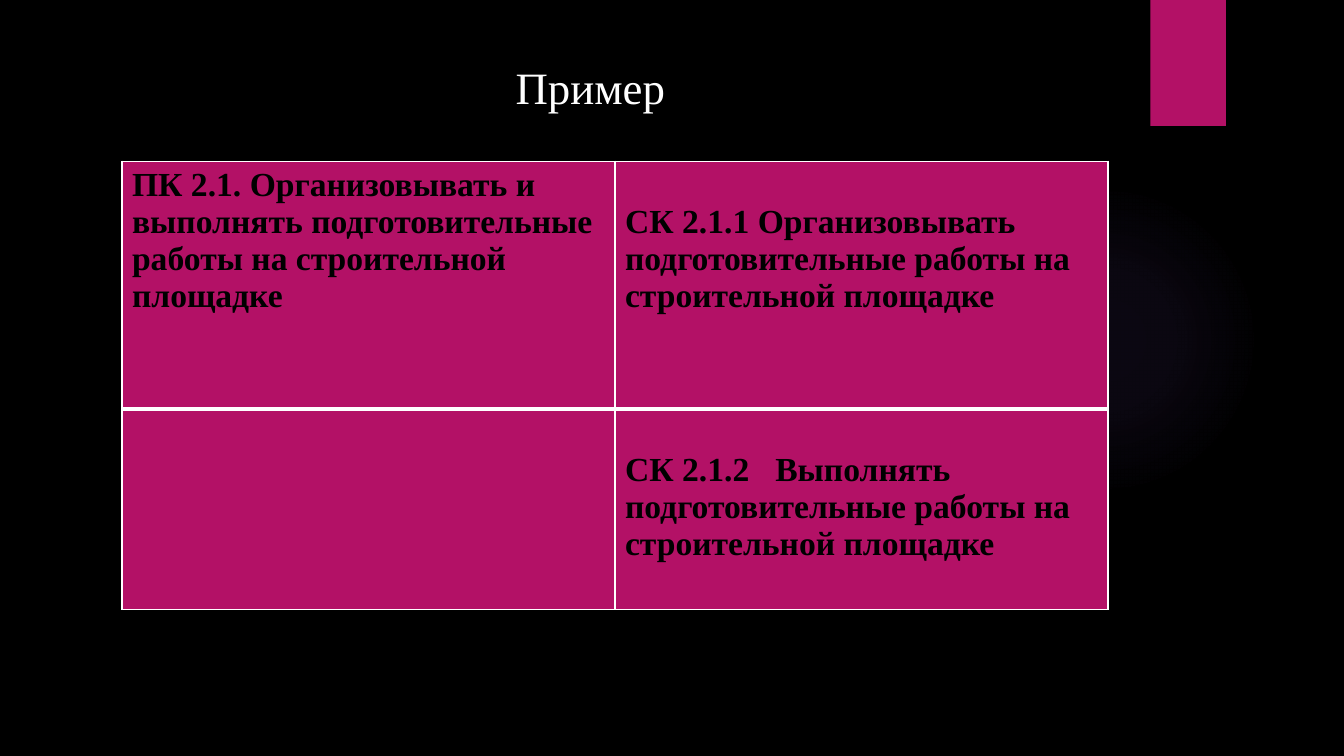
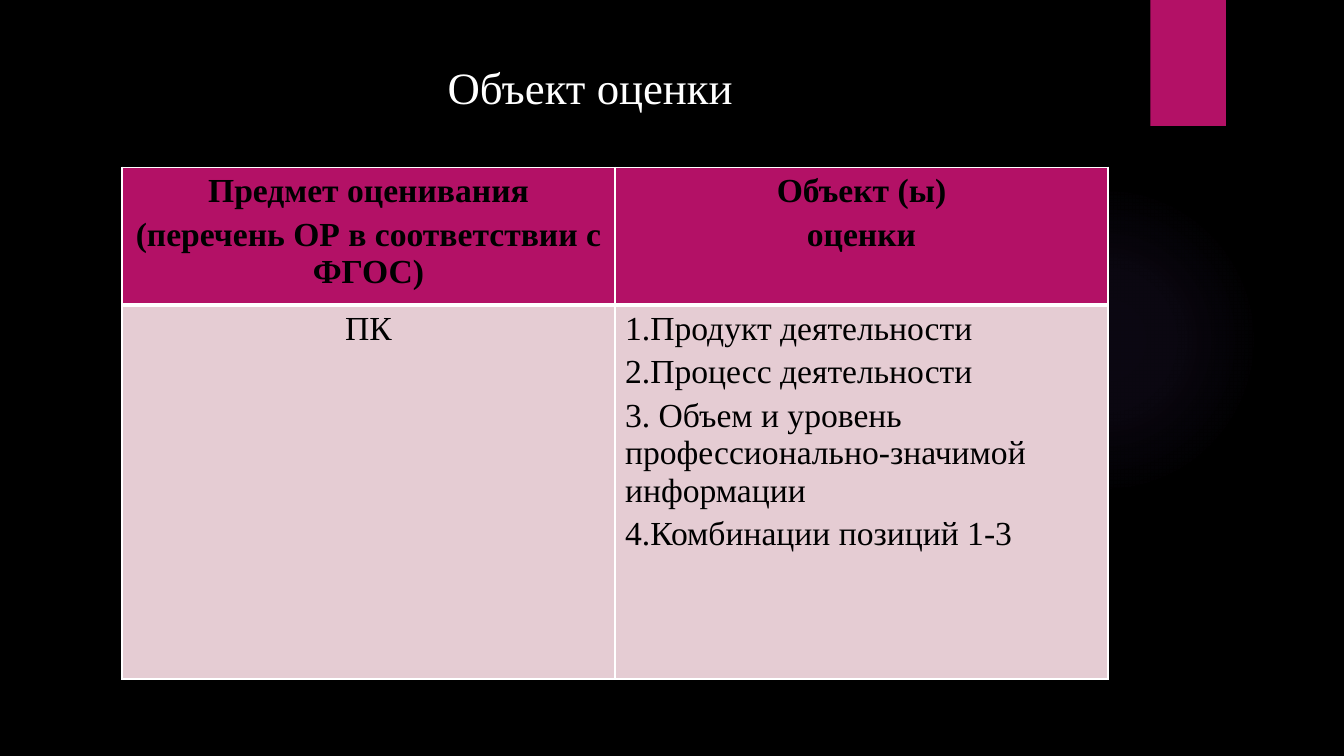
from lxml import etree
from pptx import Presentation
from pptx.dml.color import RGBColor
from pptx.enum.shapes import MSO_SHAPE
from pptx.enum.text import PP_ALIGN
from pptx.oxml import parse_xml
from pptx.oxml.ns import nsdecls, qn
from pptx.util import Inches, Pt

FONT = "Times New Roman"
BLACK, WHITE, PINK, PALE, GLOW = "000000", "FFFFFF", "B31166", "E5CCD3", "9B6BF2"
STOPS = [(0, 7), (36, 6), (69, 0)]  # glow: position and opacity in percent
LEFT, COL = 1.21, 4.89
TAB = 1.49
MID, START = PP_ALIGN.CENTER, PP_ALIGN.LEFT

# Each cell: paragraphs, bold, alignment, fill, top inset
SLIDES = [
    {"title": "Пример", "top": 1.6, "rows": [2.46, 1.99], "cells": [
        [(["ПК 2.1. Организовывать и выполнять подготовительные работы "
           "на строительной площадке"], True, START, PINK, 0.05),
         (["СК 2.1.1 Организовывать подготовительные работы на "
           "строительной площадке"], True, START, PINK, 0.42)],
        [([], True, START, PINK, 0.05),
         (["СК 2.1.2\tВыполнять подготовительные работы на "
           "строительной площадке"], True, START, PINK, 0.42)],
    ]},
    {"title": "Объект оценки", "top": 1.66, "rows": [1.27, 3.71], "cells": [
        [(["Предмет оценивания", "(перечень ОР в соответствии с ФГОС)"],
          True, MID, PINK, 0.05),
         (["Объект (ы)", "оценки"], True, MID, PINK, 0.05)],
        [(["ПК"], False, MID, PALE, 0.05),
         (["1.Продукт деятельности", "2.Процесс деятельности",
           "3. Объем и уровень профессионально-значимой информации",
           "4.Комбинации позиций 1-3"], False, START, PALE, 0.05)],
    ]},
]


def paint(fill, hue):
    fill.solid()
    fill.fore_color.rgb = RGBColor.from_string(hue)


def style(font, hue, **look):
    for key, value in {"name": FONT, **look}.items():
        setattr(font, key, value)
    font.color.rgb = RGBColor.from_string(hue)


def add_form(slide, kind, *box):
    form = slide.shapes.add_shape(kind, *map(Inches, box))
    form.shadow.inherit = False
    form.line.fill.background()
    return form


def add_frame(slide, title):
    """Background, glow, corner band and title."""
    paint(slide.background.fill, BLACK)
    glow = add_form(slide, MSO_SHAPE.OVAL, 9.41, 1.83, 3.08, 3.08)
    stops = "".join(
        f'<a:gs pos="{pos * 1000}"><a:srgbClr val="{GLOW}">'
        f'<a:alpha val="{part * 1000}"/></a:srgbClr></a:gs>'
        for pos, part in STOPS)
    glow.element.spPr.find(qn("a:prstGeom")).addnext(parse_xml(
        f'<a:gradFill {nsdecls("a")}><a:gsLst>{stops}</a:gsLst>'
        '<a:path path="circle"><a:fillToRect l="50000" t="50000" '
        'r="50000" b="50000"/></a:path></a:gradFill>'))
    paint(add_form(slide, MSO_SHAPE.RECTANGLE, 11.41, 0, 0.75, 1.25).fill, PINK)
    frame = slide.shapes.add_textbox(
        *map(Inches, (0.71, 0.54, 10.29, 0.78))).text_frame
    frame.word_wrap = True
    para = frame.paragraphs[0]
    para.text, para.alignment = title, MID
    style(para.font, WHITE, size=Pt(32))


def add_edges(cell, widths):
    props = cell._tc.get_or_add_tcPr()
    for spot, (side, width) in enumerate(widths.items()):
        props.insert(spot, parse_xml(
            f'<a:ln{side} {nsdecls("a")} w="{Pt(width)}"><a:solidFill>'
            f'<a:srgbClr val="{WHITE}"/></a:solidFill></a:ln{side}>'))


def fill_cell(cell, lines, bold, align, hue, inset):
    paint(cell.fill, hue)
    cell.margin_top = Inches(inset)
    frame = cell.text_frame
    for num, line in enumerate(lines):
        para = frame.add_paragraph() if num else frame.paragraphs[0]
        para.text, para.alignment = line, align
        if num:
            para.space_before = Pt(4.8)
        if "\t" in line:
            tabs = etree.SubElement(para._p.get_or_add_pPr(), qn("a:tabLst"))
            etree.SubElement(tabs, qn("a:tab"), pos=str(Inches(TAB)), algn="l")
        style(para.font, BLACK, size=Pt(24), bold=bold)


def add_grid(slide, top, rows, cells):
    grid = slide.shapes.add_table(
        len(rows), 2, *map(Inches, (LEFT, top, 2 * COL, sum(rows)))).table
    for col in grid.columns:
        col.width = Inches(COL)
    for r, (high, line) in enumerate(zip(rows, cells)):
        grid.rows[r].height = Inches(high)
        for c, data in enumerate(line):
            cell = grid.cell(r, c)
            fill_cell(cell, *data)
            # Thick rule between the two rows
            add_edges(cell, {"L": 1, "R": 1, "T": 3 if r else 1,
                             "B": 1 if r else 3})


def main():
    deck = Presentation()
    deck.slide_width, deck.slide_height = Inches(13.33), Inches(7.5)
    for page in SLIDES:
        slide = deck.slides.add_slide(deck.slide_layouts[6])
        add_frame(slide, page["title"])
        add_grid(slide, page["top"], page["rows"], page["cells"])
    deck.save("out.pptx")


if __name__ == "__main__":
    main()
